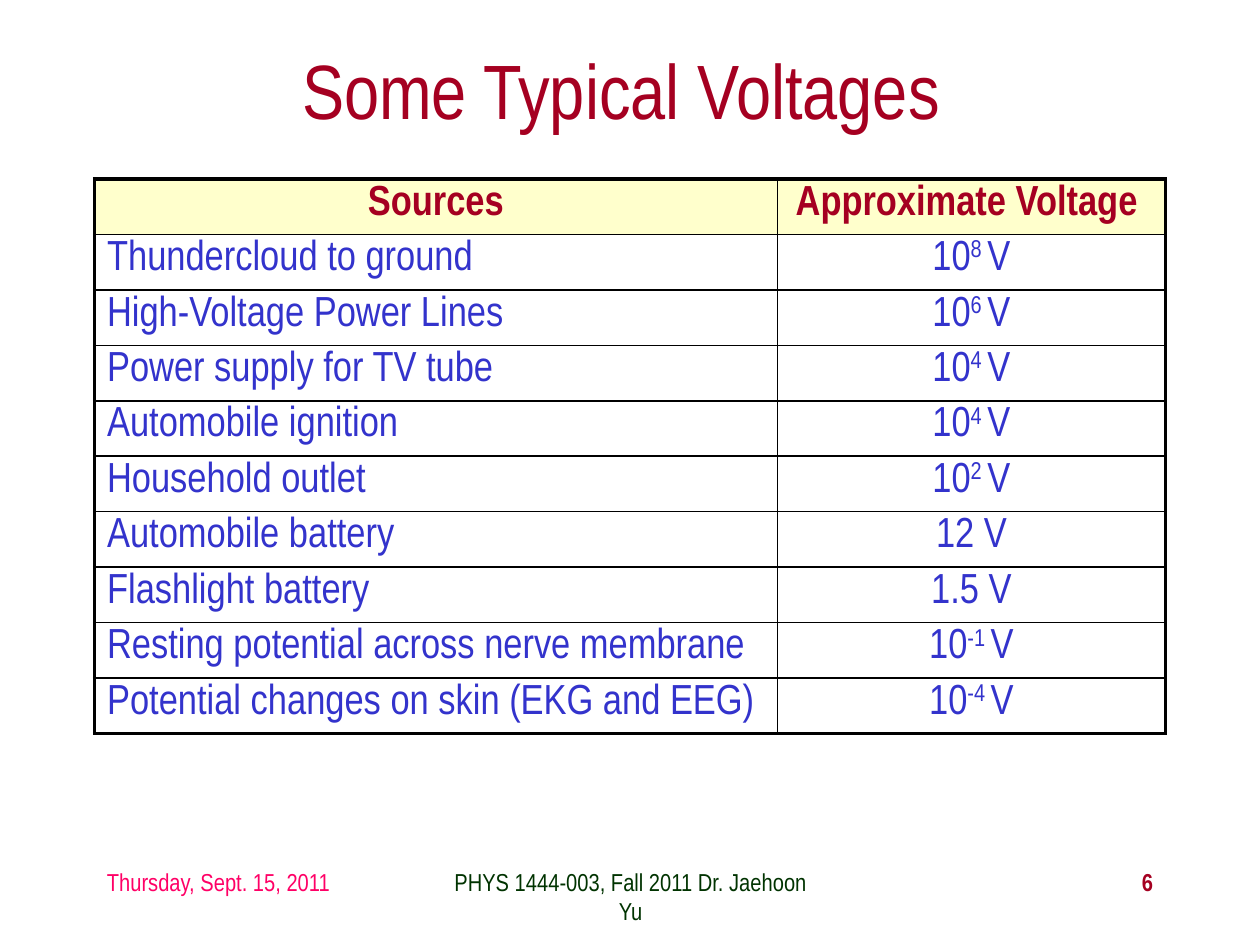
from dataclasses import dataclass

from lxml.etree import SubElement
from pptx import Presentation
from pptx.dml.color import RGBColor
from pptx.enum.text import MSO_ANCHOR, MSO_AUTO_SIZE, PP_ALIGN
from pptx.oxml.ns import qn
from pptx.util import Inches, Pt

FONT = "Arial Narrow"
DARK_RED = "A50021"
BLUE = "3333CC"
BLACK = "000000"
HEADER_FILL = "FFFFCC"
OUTER_WIDTH = 2.25
INNER_WIDTH = 1


@dataclass(frozen=True)
class VoltageRow:
    source: str
    base: str
    exponent: str = ""


@dataclass(frozen=True)
class FooterItem:
    text: str
    left: float
    width: float
    color: str
    align: PP_ALIGN
    bold: bool = False


HEADER = ("Sources", "Approximate Voltage ")
VOLTAGES = [
    VoltageRow("Thundercloud to ground", "10", "8 "),
    VoltageRow("High-Voltage Power Lines", "10", "6 "),
    VoltageRow("Power supply for TV tube", "10", "4 "),
    VoltageRow("Automobile ignition", "10", "4 "),
    VoltageRow("Household outlet", "10", "2 "),
    VoltageRow("Automobile battery", "12 "),
    VoltageRow("Flashlight battery", "1.5 "),
    VoltageRow("Resting potential across nerve membrane", "10", "-1 "),
    VoltageRow("Potential changes on skin (EKG and EEG)", "10", "-4 "),
]
FOOTER = [
    FooterItem("Thursday, Sept. 15, 2011", 0.75, 2.33, "FF0066", PP_ALIGN.LEFT),
    FooterItem("PHYS 1444-003, Fall 2011 Dr. Jaehoon Yu", 3.42, 3.17, "003300", PP_ALIGN.CENTER),
    FooterItem("6", 7.17, 2.08, DARK_RED, PP_ALIGN.RIGHT, bold=True),
]


def rgb(color: str) -> RGBColor:
    return RGBColor.from_string(color)


def add_span(para, text: str, size: float, color: str, bold: bool = False, raised: bool = False) -> None:
    span = para.add_run()
    span.text = text
    span.font.name = FONT
    span.font.size = Pt(size)
    span.font.bold = bold
    span.font.color.rgb = rgb(color)
    if raised:
        span.font._element.set("baseline", "30000")


def add_title(page, text: str) -> None:
    title = page.shapes.title
    title.left, title.top = Inches(0.75), Inches(0.33)
    title.width, title.height = Inches(8.5), Inches(0.75)
    frame = title.text_frame
    frame.auto_size = MSO_AUTO_SIZE.NONE
    frame.vertical_anchor = MSO_ANCHOR.MIDDLE
    para = frame.paragraphs[0]
    para.alignment = PP_ALIGN.CENTER
    add_span(para, text, 44, DARK_RED)


def add_footer_item(page, item: FooterItem) -> None:
    box = page.shapes.add_textbox(Inches(item.left), Inches(6.83), Inches(item.width), Inches(0.5))
    box.text_frame.word_wrap = True
    para = box.text_frame.paragraphs[0]
    para.alignment = item.align
    add_span(para, item.text, 14, item.color, item.bold)


def set_borders(cell, outer_sides: dict[str, bool]) -> None:
    properties = cell._tc.get_or_add_tcPr()
    for side, outer in outer_sides.items():
        width = Pt(OUTER_WIDTH if outer else INNER_WIDTH)
        line = SubElement(properties, qn(f"a:ln{side}"), w=str(width))
        fill = SubElement(line, qn("a:solidFill"))
        SubElement(fill, qn("a:srgbClr"), val=BLACK)


def style_cell(cell, row: int, column: int, last_row: int) -> None:
    cell.vertical_anchor = MSO_ANCHOR.MIDDLE
    cell.margin_top = Inches(0)
    cell.margin_bottom = Inches(0.04)
    set_borders(cell, {"L": column == 0, "R": column == 1, "T": row == 0, "B": row == last_row})
    if row == 0:
        cell.fill.solid()
        cell.fill.fore_color.rgb = rgb(HEADER_FILL)
    else:
        cell.fill.background()


def add_voltage_table(page) -> None:
    last_row = len(VOLTAGES)
    frame = page.shapes.add_table(last_row + 1, 2, Inches(0.75), Inches(1.42), Inches(8.5), Inches(4.14))
    table = frame.table
    table.first_row = False
    table.horz_banding = False
    table.columns[0].width = Inches(5.42)
    table.columns[1].width = Inches(3.08)
    for row in range(last_row + 1):
        for column in range(2):
            style_cell(table.cell(row, column), row, column, last_row)

    for column, heading in enumerate(HEADER):
        para = table.cell(0, column).text_frame.paragraphs[0]
        para.alignment = PP_ALIGN.CENTER
        add_span(para, heading, 24, DARK_RED, bold=True)

    for row, voltage in enumerate(VOLTAGES, start=1):
        source = table.cell(row, 0).text_frame.paragraphs[0]
        add_span(source, voltage.source, 24, BLUE)
        value = table.cell(row, 1).text_frame.paragraphs[0]
        value.alignment = PP_ALIGN.CENTER
        if voltage.exponent:
            add_span(value, voltage.base, 24, BLUE)
            add_span(value, voltage.exponent, 24, BLUE, raised=True)
            add_span(value, "V", 24, BLUE)
        else:
            add_span(value, f"{voltage.base}V", 24, BLUE)


def main() -> None:
    deck = Presentation()
    deck.slide_width, deck.slide_height = Inches(10), Inches(7.5)
    page = deck.slides.add_slide(deck.slide_layouts[5])
    for item in FOOTER:
        add_footer_item(page, item)
    add_title(page, "Some Typical Voltages ")
    add_voltage_table(page)
    deck.save("out.pptx")


if __name__ == "__main__":
    main()
